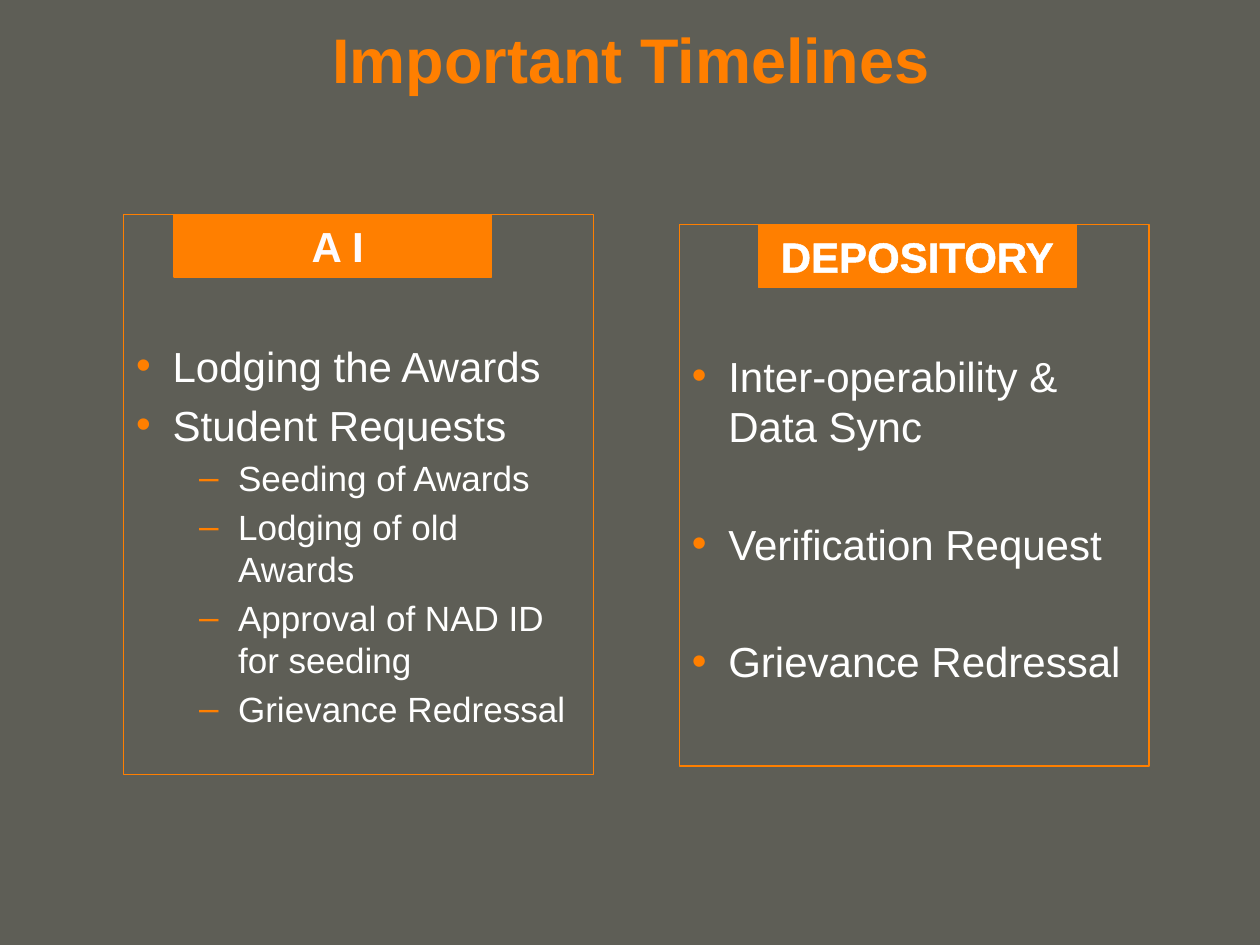
from dataclasses import dataclass

from lxml import etree
from pptx import Presentation
from pptx.dml.color import RGBColor
from pptx.enum.shapes import MSO_SHAPE
from pptx.enum.text import MSO_ANCHOR, MSO_AUTO_SIZE, PP_ALIGN
from pptx.oxml.ns import qn
from pptx.util import Inches, Pt

RECTANGLE = MSO_SHAPE.RECTANGLE
TOP, MIDDLE = MSO_ANCHOR.TOP, MSO_ANCHOR.MIDDLE
CENTER = PP_ALIGN.CENTER
NO_AUTOFIT = MSO_AUTO_SIZE.NONE

ORANGE, WHITE, OFF_WHITE, OLIVE_GRAY = "FF7F00", "FFFFFF", "FEFBFD", "5E5E56"
PANEL_WIDTH = 3.73
HEADING_WIDTH, HEADING_HEIGHT = 2.52, 0.5
LINE_FACTOR, SPACE_FACTOR = 1.2, 0.2


@dataclass
class Level:
    size: int
    bullet: str
    margin: float
    hanging: float


@dataclass
class Item:
    text: str
    level: int = 0
    skipped_lines: int = 0


@dataclass
class Panel:
    left: float
    top: float
    height: float
    heading: str
    heading_left: float
    heading_color: str
    items: list[Item]


LEVELS = [Level(24, "•", 0.29, 0.29), Level(20, "–", 0.81, 0.31)]
PANELS = [
    Panel(0.98, 1.7, 4.45, " A I", 1.38, OFF_WHITE, [
        Item("Lodging the Awards"),
        Item("Student Requests"),
        Item("Seeding of Awards", 1),
        Item("Lodging of old Awards", 1),
        Item("Approval of NAD ID for seeding", 1),
        Item("Grievance Redressal", 1),
    ]),
    Panel(5.39, 1.78, 4.3, "DEPOSITORY", 6.02, WHITE, [
        Item("Inter-operability & Data Sync"),
        Item("Verification Request", skipped_lines=1),
        Item("Grievance Redressal", skipped_lines=1),
    ]),
]


def rgb(color: str) -> RGBColor:
    return RGBColor.from_string(color)


def place(shape, left: float, top: float, width: float, height: float) -> None:
    box = {"left": left, "top": top, "width": width, "height": height}
    for side, length in box.items():
        setattr(shape, side, Inches(length))


def add_text(paragraph, text: str, size: int, color: str, bold: bool = False):
    run = paragraph.add_run()
    run.text = text
    formats = {"name": "Arial", "size": Pt(size), "bold": bold}
    for attribute, value in formats.items():
        setattr(run.font, attribute, value)
    run.font.color.rgb = rgb(color)
    return run


def set_frame(frame, anchor, top_inset: float = 0.05) -> None:
    formats = {
        "auto_size": NO_AUTOFIT, "word_wrap": True, "vertical_anchor": anchor,
        "margin_left": Inches(0.1), "margin_right": Inches(0.1),
        "margin_top": Inches(top_inset), "margin_bottom": Inches(0.05),
    }
    for attribute, value in formats.items():
        setattr(frame, attribute, value)


def set_border(shape) -> None:
    shape.line.color.rgb = rgb(ORANGE)
    shape.line.width = Pt(0.75)


def set_bullet(paragraph, level: Level) -> None:
    properties = paragraph._p.get_or_add_pPr()
    properties.set("marL", str(Inches(level.margin)))
    properties.set("indent", str(-Inches(level.hanging)))
    bullet_color = etree.SubElement(properties, qn("a:buClr"))
    etree.SubElement(bullet_color, qn("a:srgbClr"), val=ORANGE)
    etree.SubElement(properties, qn("a:buFont"), typeface="Arial")
    etree.SubElement(properties, qn("a:buChar"), char=level.bullet)


def outline_text(run, color: str) -> None:
    outline = etree.Element(qn("a:ln"), w=str(Pt(1.42)))
    fill = etree.SubElement(outline, qn("a:solidFill"))
    etree.SubElement(fill, qn("a:srgbClr"), val=color)
    run.font._element.insert(0, outline)


def fill_list(body, panel: Panel) -> None:
    place(body, panel.left, panel.top, PANEL_WIDTH, panel.height)
    set_border(body)
    frame = body.text_frame
    set_frame(frame, TOP, top_inset=1)
    for index, item in enumerate(panel.items):
        level = LEVELS[item.level]
        paragraph = frame.add_paragraph() if index else frame.paragraphs[0]
        line, gap = level.size * LINE_FACTOR, level.size * SPACE_FACTOR
        paragraph.level = item.level
        paragraph.line_spacing = Pt(line)
        paragraph.space_before = Pt(gap + item.skipped_lines * (line + gap) if index else 0)
        set_bullet(paragraph, level)
        add_text(paragraph, item.text, level.size, WHITE)


def add_heading(slide, panel: Panel) -> None:
    heading = slide.shapes.add_shape(
        RECTANGLE, Inches(panel.heading_left), Inches(panel.top),
        Inches(HEADING_WIDTH), Inches(HEADING_HEIGHT))
    heading.shadow.inherit = False
    heading.fill.solid()
    heading.fill.fore_color.rgb = rgb(ORANGE)
    set_border(heading)
    set_frame(heading.text_frame, MIDDLE)
    paragraph = heading.text_frame.paragraphs[0]
    paragraph.alignment = CENTER
    run = add_text(paragraph, panel.heading, 24, panel.heading_color, bold=True)
    outline_text(run, WHITE)


def main() -> None:
    presentation = Presentation()
    presentation.slide_width, presentation.slide_height = Inches(10), Inches(7.5)
    two_content = presentation.slide_layouts[3]
    slide = presentation.slides.add_slide(two_content)
    slide.background.fill.solid()
    slide.background.fill.fore_color.rgb = rgb(OLIVE_GRAY)

    # Title
    title = slide.shapes.title
    place(title, 0.51, 0, 9, 0.92)
    set_frame(title.text_frame, MIDDLE)
    title_line = title.text_frame.paragraphs[0]
    title_line.alignment = CENTER
    add_text(title_line, "Important Timelines", 36, ORANGE, bold=True)

    # Framed lists with their headings on the top edge
    for index, panel in enumerate(PANELS, start=1):
        fill_list(slide.placeholders[index], panel)
        add_heading(slide, panel)

    presentation.save("out.pptx")


if __name__ == "__main__":
    main()
